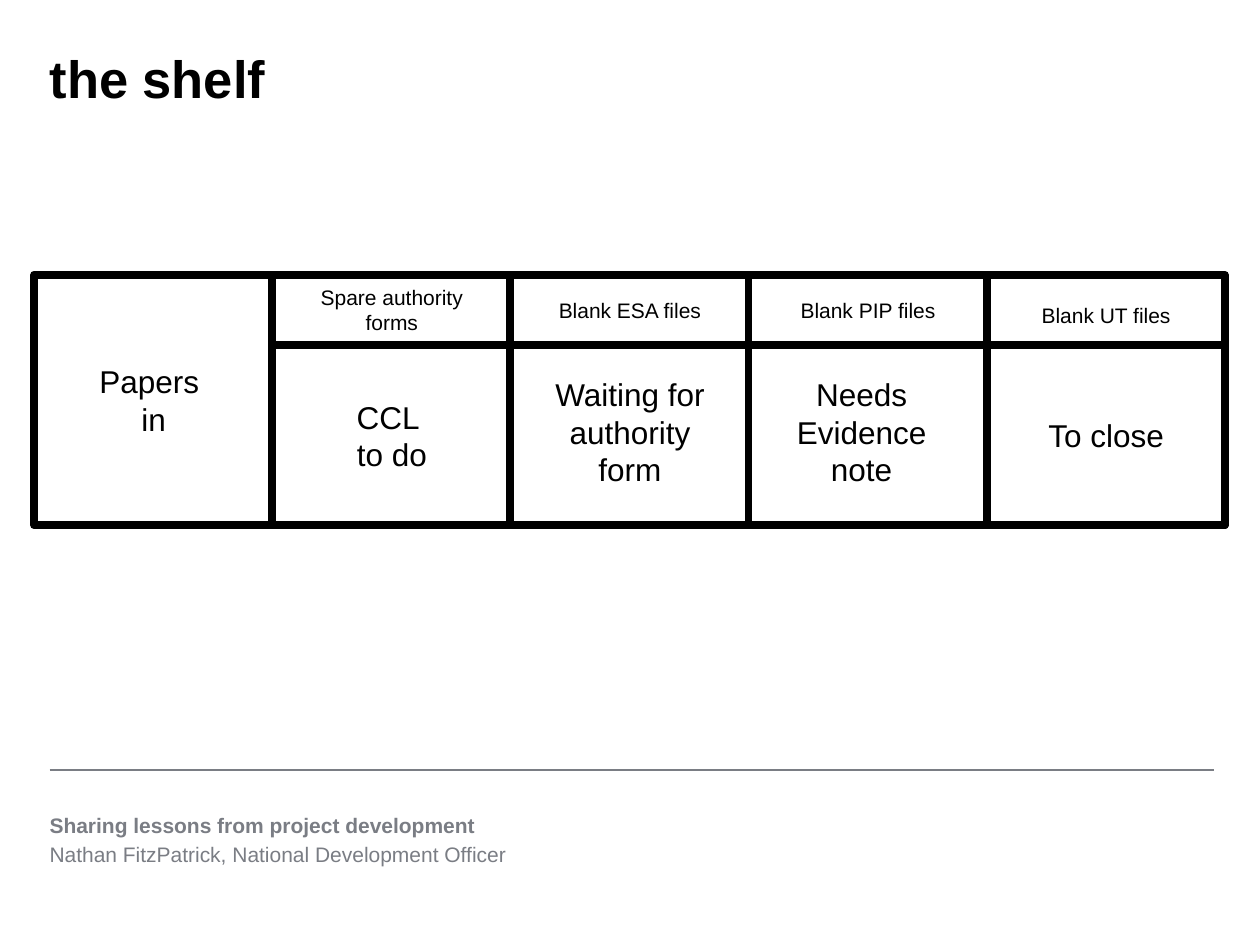
from typing import NamedTuple

from lxml.etree import SubElement
from pptx import Presentation
from pptx.dml.color import RGBColor
from pptx.enum.shapes import MSO_CONNECTOR, MSO_SHAPE
from pptx.enum.text import MSO_ANCHOR as Anchor, MSO_AUTO_SIZE as AutoSize, PP_ALIGN as Align
from pptx.oxml.ns import qn
from pptx.util import Cm, Pt

BLACK = RGBColor(0x00, 0x00, 0x00)
GREY = RGBColor(0x7A, 0x7D, 0x84)
FONT = "Arial"

# Shelf grid, in cm
SHELF_X, SHELF_Y = 0.69, 5.54
CELL_W, CELL_H = 4.8, 5.05
COLUMNS = 5
DIVIDER_Y = 6.96
LABEL_INSET, LABEL_W = 0.58, 3.66


class Label(NamedTuple):
    text: str
    column: int
    middle: float
    height: float
    size: int
    shift: float = 0


class Heading(NamedTuple):
    text: str
    top: float
    width: float
    height: float
    size: int
    spacing: int
    color: RGBColor
    bold: bool


LABELS = [
    Label("Papers \nin", 0, 8.06, 1.8, 18),
    Label("CCL \nto do", 1, 8.78, 1.8, 18),
    Label("Waiting for authority form", 2, 8.7, 2.57, 18),
    Label("Needs Evidence note", 3, 8.7, 2.57, 18, -0.13),
    Label("To close", 4, 8.76, 1.02, 18),
    Label("Spare authority forms", 1, 6.25, 1.27, 12),
    Label("Blank ESA files", 2, 6.25, 0.76, 12),
    Label("Blank PIP files", 3, 6.25, 0.76, 12),
    Label("Blank UT files", 4, 6.35, 0.76, 12),
]

HEADINGS = [
    Heading("the shelf", 1, 23.19, 2.79, 30, 34, BLACK, True),
    Heading("Sharing lessons from project development", 16.36, 17.09, 0.56, 12, 15, GREY, True),
    Heading("Nathan FitzPatrick, National Development Officer", 16.94, 17.09, 0.51, 12, 15, GREY, False),
]


def column_x(column: int) -> float:
    return SHELF_X + column * CELL_W


def add_frame(s, x: float, y: float, w: float, h: float) -> None:
    sp = s.shapes.add_shape(MSO_SHAPE.RECTANGLE, Cm(x), Cm(y), Cm(w), Cm(h))
    sp.shadow.inherit = False
    sp.fill.background()
    sp.line.color.rgb = BLACK
    sp.line.width = Pt(4.5)


def add_text(s, text: str, x: float, y: float, w: float, h: float,
             size: int, color: RGBColor, bold: bool = False):
    tf = s.shapes.add_textbox(Cm(x), Cm(y), Cm(w), Cm(h)).text_frame
    tf.word_wrap = True
    tf.text = text
    for p in tf.paragraphs:
        for r in p.runs:
            r.font.name = FONT
            r.font.size = Pt(size)
            r.font.bold = bold
            r.font.color.rgb = color
    return tf


def add_label(s, label: Label) -> None:
    x = column_x(label.column) + LABEL_INSET + label.shift
    y = label.middle - label.height / 2
    tf = add_text(s, label.text, x, y, LABEL_W, label.height, label.size, BLACK)
    tf.vertical_anchor = Anchor.MIDDLE
    tf.auto_size = AutoSize.SHAPE_TO_FIT_TEXT
    for p in tf.paragraphs:
        p.alignment = Align.CENTER


def add_heading(s, heading: Heading) -> None:
    tf = add_text(s, heading.text, 1, heading.top, heading.width, heading.height,
                  heading.size, heading.color, heading.bold)
    tf.margin_left = tf.margin_right = tf.margin_top = tf.margin_bottom = 0
    tf.paragraphs[0].line_spacing = Pt(heading.spacing)


def add_rule(s, x1: float, x2: float, y: float) -> None:
    line = s.shapes.add_connector(MSO_CONNECTOR.STRAIGHT, Cm(x1), Cm(y), Cm(x2), Cm(y))
    line.line.color.rgb = GREY
    line.line.width = Pt(0.75)
    SubElement(line.element.spPr, qn("a:effectLst"))


def main() -> None:
    prs = Presentation()
    prs.slide_width, prs.slide_height = Cm(25.4), Cm(19.05)
    s = prs.slides.add_slide(prs.slide_layouts[6])

    # Footer rule
    add_rule(s, 1, 24.48, 15.52)

    # Shelf: lower compartments, then full-height columns
    add_frame(s, column_x(1), DIVIDER_Y, (COLUMNS - 1) * CELL_W, SHELF_Y + CELL_H - DIVIDER_Y)
    for column in range(COLUMNS):
        add_frame(s, column_x(column), SHELF_Y, CELL_W, CELL_H)

    # Compartment labels
    for label in LABELS:
        add_label(s, label)

    # Title and footer
    for heading in HEADINGS:
        add_heading(s, heading)

    prs.save("out.pptx")


if __name__ == "__main__":
    main()
